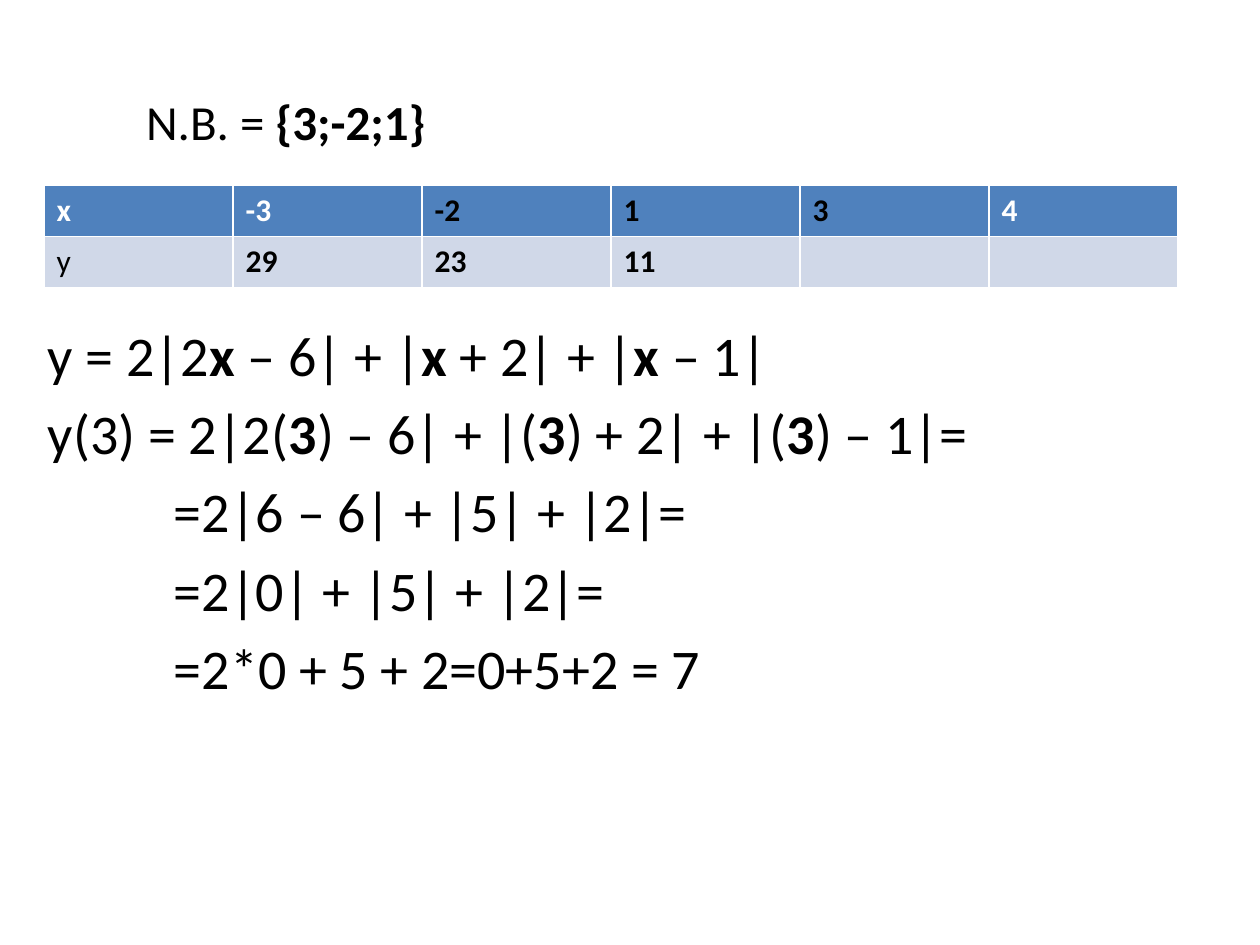
"""Builds a slide that evaluates an absolute value function at x = 3."""
from pptx import Presentation
from pptx.dml.color import RGBColor
from pptx.enum.text import MSO_ANCHOR, MSO_AUTO_SIZE, PP_ALIGN
from pptx.oxml.ns import qn
from pptx.util import Inches, Pt

BLACK = RGBColor(0x00, 0x00, 0x00)
WHITE = RGBColor(0xFF, 0xFF, 0xFF)
HEADER_BLUE = RGBColor(0x4F, 0x81, 0xBD)
BAND_BLUE = RGBColor(0xD0, 0xD8, 0xE8)

POINTS = [("x", "y"), ("-3", "29"), ("-2", "23"), ("1", "11"), ("3", ""), ("4", "")]
CRITICAL_VALUES = {"-2", "1", "3"}
STEPS = [
    ("y = 2|2**x** – 6| + |**x** + 2| + |**x** – 1|", 0),
    ("y(3) = 2|2(**3**) – 6| + |(**3**) + 2| + |(**3**) – 1|=", 0),
    ("=2|6 – 6| + |5| + |2|=", 1),
    ("=2|0| + |5| + |2|=", 1),
    ("=2*0 + 5 + 2=0+5+2 = 7", 1),
]


class SlideBuilder:
    """Holds the text style and the slide being filled."""

    def __init__(self, slide, font_name="Calibri"):
        self.slide = slide
        self.font_name = font_name

    def style(self, paragraph, size, color=BLACK):
        """Sets the font that the runs of a paragraph share."""
        paragraph.font.name = self.font_name
        paragraph.font.size = Pt(size)
        paragraph.font.color.rgb = color

    def add_runs(self, paragraph, text, size):
        """Adds text in which double asterisks enclose the bold parts."""
        self.style(paragraph, size)
        for index, part in enumerate(text.split("**")):
            if part:
                run = paragraph.add_run()
                run.text = part
                run.font.bold = index % 2 == 1

    def place(self, shape, left, top, width, height):
        """Moves a placeholder and returns its top-anchored text frame."""
        shape.left, shape.top = Inches(left), Inches(top)
        shape.width, shape.height = Inches(width), Inches(height)
        frame = shape.text_frame
        frame.auto_size = MSO_AUTO_SIZE.NONE
        frame.vertical_anchor = MSO_ANCHOR.TOP
        frame.word_wrap = True
        return frame

    def title(self, text, *box):
        """Fills the title placeholder."""
        paragraph = self.place(self.slide.shapes.title, *box).paragraphs[0]
        paragraph.alignment = PP_ALIGN.LEFT
        self.add_runs(paragraph, text, 28)

    def body(self, lines, *box):
        """Fills the body placeholder with unbulleted, indented lines."""
        frame = self.place(self.slide.placeholders[1], *box)
        for index, (text, indent) in enumerate(lines):
            paragraph = frame.add_paragraph() if index else frame.paragraphs[0]
            self.add_runs(paragraph, text, 32)
            properties = paragraph._p.get_or_add_pPr()
            properties.set("marL", str(Inches(indent)))
            properties.set("indent", "0")
            properties.insert(0, properties.makeelement(qn("a:buNone"), {}))

    def table(self, points, left, top, width, height):
        """Adds a table with one column per point."""
        table = self.slide.shapes.add_table(
            2, len(points), Inches(left), Inches(top), Inches(width), Inches(height)
        ).table
        for column, point in enumerate(points):
            for row, text in enumerate(point):
                cell = table.cell(row, column)
                cell.text = text
                cell.fill.solid()
                cell.fill.fore_color.rgb = BAND_BLUE if row else HEADER_BLUE
                paragraph = cell.text_frame.paragraphs[0]
                dark = row == 1 or text in CRITICAL_VALUES
                self.style(paragraph, 18, BLACK if dark else WHITE)
                paragraph.font.bold = text != "y"


def main():
    """Builds and saves the presentation."""
    presentation = Presentation()
    presentation.slide_width, presentation.slide_height = Inches(10), Inches(7.5)
    slide = presentation.slides.add_slide(presentation.slide_layouts[1])
    builder = SlideBuilder(slide)
    builder.table(POINTS, 0.35, 1.47, 9, 0.81)
    builder.title("N.B. = **{3;-2;1}**", 1.06, 0.68, 4.17, 0.57)
    builder.body(STEPS, 0.28, 2.49, 9, 3.54)
    presentation.save("out.pptx")


if __name__ == "__main__":
    main()
